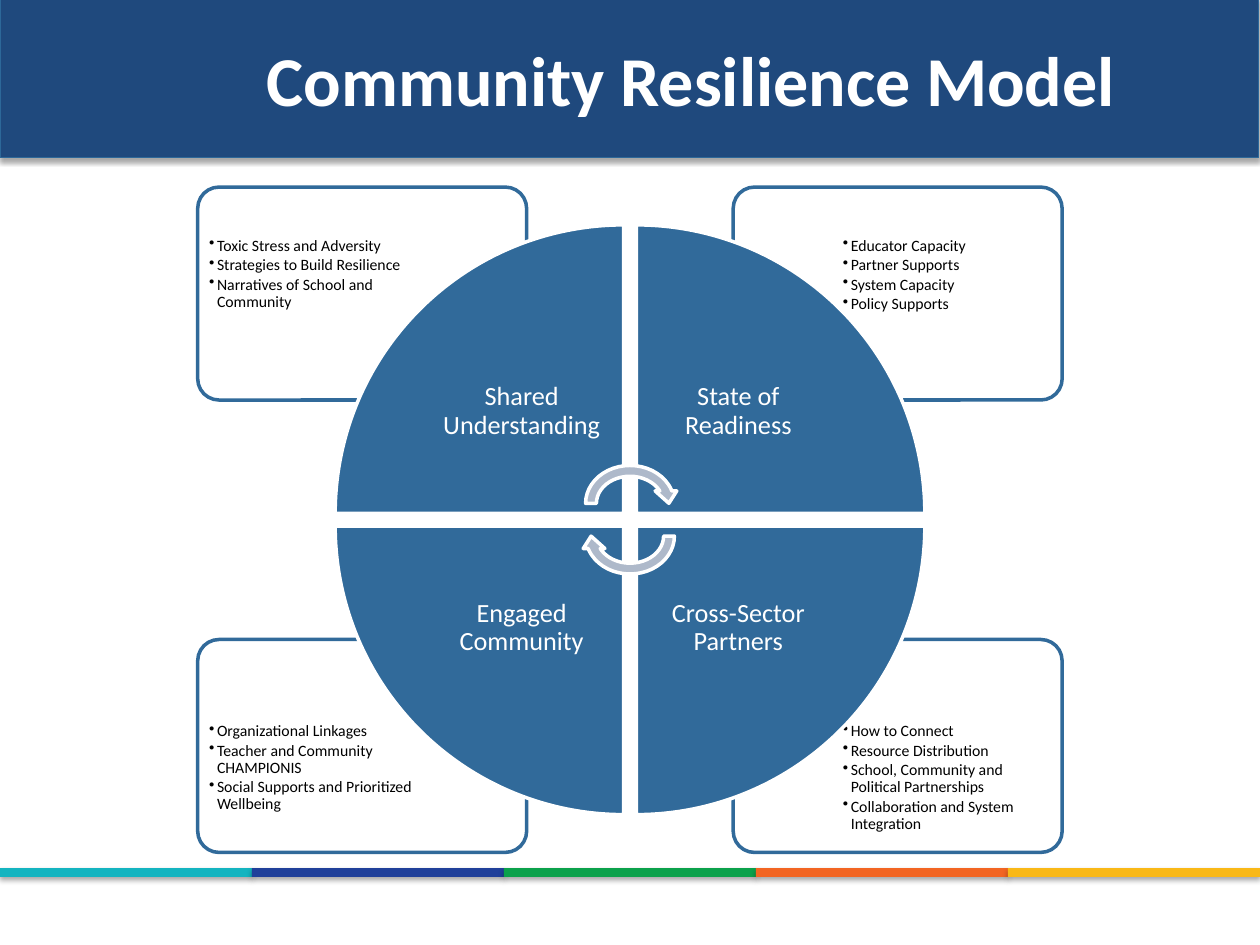
from dataclasses import dataclass
from typing import Optional

import lxml.etree
import pptx
import pptx.dml.color
import pptx.enum.shapes
import pptx.enum.text
import pptx.oxml.ns
import pptx.util

Pt = pptx.util.Pt
qn = pptx.oxml.ns.qn
SHAPES = pptx.enum.shapes.MSO_SHAPE
ANCHOR = pptx.enum.text.MSO_ANCHOR
ALIGN = pptx.enum.text.PP_ALIGN

COLORS = {
    "white": "FFFFFF", "black": "000000", "header": "1F497D", "header_line": "2D6899",
    "blue": "316A9A", "arrow": "AEB9CA",
}
STRIPES = ["14B4C0", "20409A", "0BA14B", "F26522", "F9B817"]
FONT = "Calibri"

# Everything in the diagram mirrors around this centre
CENTER_X, CENTER_Y = 360, 297
WEDGE, WEDGE_OFFSET, LABEL = 164.9, 3.6, 116.6
CARD_WIDTH, CARD_HEIGHT = 188, 121.7
CARD_OFFSET_X, CARD_OFFSET_Y = 59, 68.4
LIST_WIDTH, LIST_HEIGHT, LIST_GAP = 126, 85.7, 2.9
BULLET_STEP = 11.25
ARROW_WIDTH, ARROW_HEIGHT, ARROW_OFFSET = 56.9, 49.5, 9.35


@dataclass
class Box:
    left: float
    top: float
    width: float
    height: float

    def lengths(self) -> list:
        return [Pt(value) for value in (self.left, self.top, self.width, self.height)]


@dataclass
class Quadrant:
    label: str
    right: bool
    bottom: bool
    rotation: int
    bullets: list[str]

    def place(self, width: float, height: float, offset_x: float, offset_y: float) -> Box:
        """Box at a distance from the centre, inside this quadrant."""
        left = CENTER_X + offset_x if self.right else CENTER_X - offset_x - width
        top = CENTER_Y + offset_y if self.bottom else CENTER_Y - offset_y - height
        return Box(left, top, width, height)


QUADRANTS = [
    Quadrant("Shared Understanding", False, False, 0, [
        "Toxic Stress and Adversity", "Strategies to Build Resilience",
        "Narratives of School and Community"]),
    Quadrant("State of Readiness", True, False, 90, [
        "Educator Capacity", "Partner Supports", "System Capacity", "Policy Supports"]),
    Quadrant("Cross-Sector Partners", True, True, 180, [
        "How to Connect", "Resource Distribution",
        "School, Community and Political Partnerships",
        "Collaboration and System Integration"]),
    Quadrant("Engaged Community", False, True, 270, [
        "Organizational Linkages", "Teacher and Community CHAMPIONIS",
        "Social Supports and Prioritized Wellbeing"]),
]


def rgb(color: str) -> pptx.dml.color.RGBColor:
    return pptx.dml.color.RGBColor.from_string(color)


def add_shape(slide, kind, box: Box, fill: str, line: Optional[str] = None,
              line_width: float = 2, rotation: float = 0):
    shape = slide.shapes.add_shape(kind, *box.lengths())
    shape.shadow.inherit = False
    shape.rotation = rotation
    shape.fill.solid()
    shape.fill.fore_color.rgb = rgb(fill)
    if line:
        shape.line.color.rgb = rgb(line)
        shape.line.width = Pt(line_width)
    else:
        shape.line.fill.background()
    return shape


def add_soft_shadow(shape) -> None:
    effects = shape._element.spPr.find(qn("a:effectLst"))
    shadow = lxml.etree.SubElement(
        effects, qn("a:outerShdw"), blurRad=str(Pt(3.1)), dist=str(Pt(1.8)),
        dir="5400000", rotWithShape="0")
    color = lxml.etree.SubElement(shadow, qn("a:srgbClr"), val=COLORS["black"])
    lxml.etree.SubElement(color, qn("a:alpha"), val="35000")


def set_opacity(shape, percent: int) -> None:
    color = shape._element.spPr.find(qn("a:solidFill")).find(qn("a:srgbClr"))
    lxml.etree.SubElement(color, qn("a:alpha"), val=str(percent * 1000))


def add_text(slide, box: Box, lines: list[str], size: float, color: str, inset: float,
             bold: bool = False, bulleted: bool = False, spacing: float = 0.9) -> None:
    frame = slide.shapes.add_textbox(*box.lengths()).text_frame
    frame.word_wrap = True
    frame.vertical_anchor = ANCHOR.TOP if bulleted else ANCHOR.MIDDLE
    frame.margin_left = frame.margin_right = Pt(inset)
    frame.margin_top = frame.margin_bottom = Pt(inset)
    for index, line in enumerate(lines):
        paragraph = frame.add_paragraph() if index else frame.paragraphs[0]
        paragraph.alignment = ALIGN.LEFT if bulleted else ALIGN.CENTER
        paragraph.line_spacing = spacing
        if bulleted:
            paragraph.space_after = Pt(1.35)
            properties = paragraph._p.get_or_add_pPr()
            properties.set("marL", str(Pt(4.5)))
            properties.set("indent", str(-Pt(4.5)))
            lxml.etree.SubElement(properties, qn("a:buChar"), char="•")
        run = paragraph.add_run()
        run.text = line
        run.font.name = FONT
        run.font.size = Pt(size)
        run.font.bold = bold
        run.font.color.rgb = rgb(color)


def add_card(slide, quadrant: Quadrant) -> None:
    box = quadrant.place(CARD_WIDTH, CARD_HEIGHT, CARD_OFFSET_X, CARD_OFFSET_Y)
    card = add_shape(slide, SHAPES.ROUNDED_RECTANGLE, box, COLORS["white"], COLORS["blue"])
    card.adjustments[0] = 0.1
    set_opacity(card, 90)
    # The list sits in the outer corner, lowered by one or two lines
    area = quadrant.place(LIST_WIDTH, LIST_HEIGHT,
                          CARD_OFFSET_X + CARD_WIDTH - LIST_GAP - LIST_WIDTH,
                          CARD_OFFSET_Y + CARD_HEIGHT - LIST_GAP - LIST_HEIGHT)
    drop = BULLET_STEP * (1 if quadrant.bottom else 2)
    area.top += drop
    area.height -= drop
    add_text(slide, area, quadrant.bullets, 9, COLORS["black"], 3.6, bulleted=True)


def add_wedge(slide, quadrant: Quadrant) -> None:
    box = quadrant.place(WEDGE, WEDGE, WEDGE_OFFSET, WEDGE_OFFSET)
    add_shape(slide, SHAPES.PIE_WEDGE, box, COLORS["blue"], COLORS["white"],
              rotation=quadrant.rotation)
    label_box = quadrant.place(LABEL, LABEL, WEDGE_OFFSET, WEDGE_OFFSET)
    add_text(slide, label_box, [quadrant.label], 15, COLORS["white"], 8.5)


def main() -> None:
    presentation = pptx.Presentation()
    presentation.slide_width, presentation.slide_height = Pt(720), Pt(540)
    slide = presentation.slides.add_slide(presentation.slide_layouts[6])

    # Footer stripes
    stripe_width = 720 / len(STRIPES)
    for index, color in enumerate(STRIPES):
        box = Box(index * stripe_width, 496.1, stripe_width, 5)
        add_soft_shadow(add_shape(slide, SHAPES.RECTANGLE, box, color))

    # Header band and title
    header = add_shape(slide, SHAPES.RECTANGLE, Box(0, -2.2, 719.3, 92.2),
                       COLORS["header"], COLORS["header_line"], 0.75)
    add_soft_shadow(header)
    add_text(slide, Box(69.8, 0, 650.2, 90), ["Community Resilience Model"], 40,
             COLORS["white"], 3.6, bold=True, spacing=1.0)

    # Cards behind, wedges in front
    for quadrant in QUADRANTS:
        add_card(slide, quadrant)
    for quadrant in QUADRANTS:
        add_wedge(slide, quadrant)

    # Cycle arrows
    for direction, rotation in ((-1, 0), (1, 180)):
        middle = CENTER_Y + direction * ARROW_OFFSET
        box = Box(CENTER_X - ARROW_WIDTH / 2, middle - ARROW_HEIGHT / 2,
                  ARROW_WIDTH, ARROW_HEIGHT)
        add_shape(slide, SHAPES.CIRCULAR_ARROW, box, COLORS["arrow"], COLORS["white"],
                  rotation=rotation)

    presentation.save("out.pptx")


if __name__ == "__main__":
    main()
